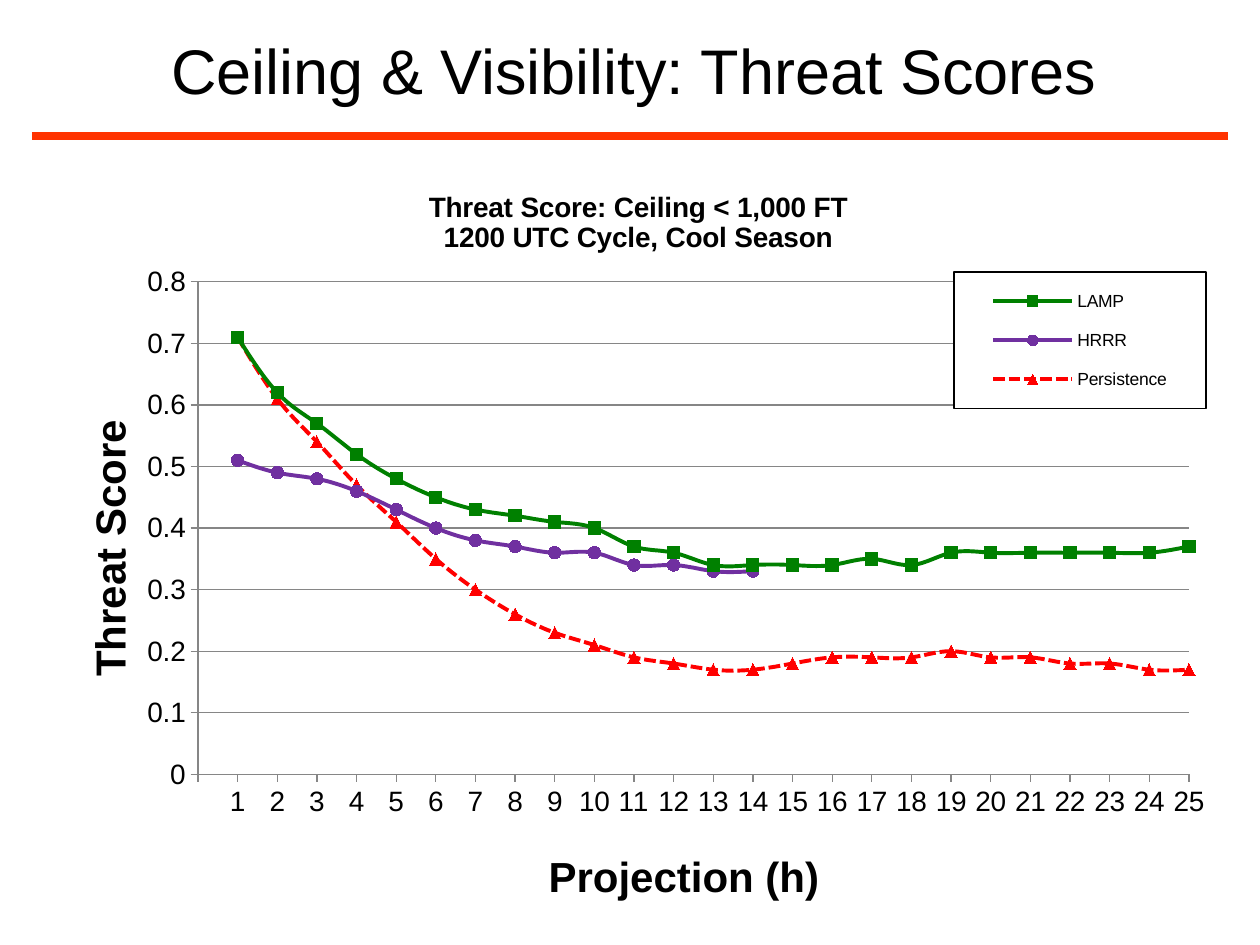
import pptx
import pptx.chart.data
import pptx.dml.color
import pptx.enum.chart
import pptx.enum.dml
import pptx.enum.shapes
import pptx.enum.text
import pptx.oxml
import pptx.util
from lxml import etree

# Content
HEADING = "Ceiling & Visibility: Threat Scores"
CHART_TITLE = ("Threat Score: Ceiling < 1,000 FT", "1200 UTC Cycle, Cool Season")
HOUR_TITLE = "Projection (h)"
SCORE_TITLE = "Threat Score"
SCORES = {
    "LAMP": [0.71, 0.62, 0.57, 0.52, 0.48, 0.45, 0.43, 0.42, 0.41, 0.4, 0.37, 0.36, 0.34,
             0.34, 0.34, 0.34, 0.35, 0.34, 0.36, 0.36, 0.36, 0.36, 0.36, 0.36, 0.37],
    "HRRR": [0.51, 0.49, 0.48, 0.46, 0.43, 0.4, 0.38, 0.37, 0.36, 0.36, 0.34, 0.34, 0.33,
             0.33],
    "Persistence": [0.71, 0.61, 0.54, 0.47, 0.41, 0.35, 0.3, 0.26, 0.23, 0.21, 0.19, 0.18,
                    0.17, 0.17, 0.18, 0.19, 0.19, 0.19, 0.2, 0.19, 0.19, 0.18, 0.18, 0.17,
                    0.17],
}

# Theme
MARK = pptx.enum.chart.XL_MARKER_STYLE
DASH = pptx.enum.dml.MSO_LINE
THEME = {
    "font": "Arial", "text": "000000", "rule": "FF3300", "grid": "868686", "paper": "FFFFFF",
    "heading": 36, "axis_title": 24, "chart_title": 16, "ticks": 16, "legend": 10,
    "rule_width": 4.5, "curve_width": 2.25, "thin": 0.75, "marker": 7,
}
CURVES = {
    "LAMP": ("008000", MARK.SQUARE, DASH.SOLID),
    "HRRR": ("7030A0", MARK.CIRCLE, DASH.SOLID),
    "Persistence": ("FF0000", MARK.TRIANGLE, DASH.SQUARE_DOT),
}

# Places in px: left, top, width, height (title spots: left, top)
PX = 914400 // 126
SLIDE = (1260, 945)
HEADING_BOX = (67, -10, 1134, 158)
RULE = (32, 136, 1228, 136)
CHART = (42, 158, 1187, 756)
PLOT = (198, 282, 991, 493)
LEGEND = (954, 272, 252, 137)
CHART_TITLE_SPOT = (425, 186)
HOUR_TITLE_SPOT = (541, 842)
SCORE_TITLE_SPOT = (75, 413)


def emu(lengths):
    return [pptx.util.Emu(length * PX) for length in lengths]


def rgb(name):
    return pptx.dml.color.RGBColor.from_string(THEME.get(name, name))


def set_all(target, values):
    for name, value in values.items():
        setattr(target, name, value)


def style_font(font, size, bold=False):
    set_all(font, {"name": THEME["font"], "size": pptx.util.Pt(THEME[size]), "bold": bold})
    font.color.rgb = rgb("text")


def style_line(line, color, width):
    line.color.rgb = rgb(color)
    line.width = pptx.util.Pt(THEME[width])


def place(part, spot, index=1, inner=False):
    """Give a chart part a manual layout, as fractions of the chart."""
    for old in part.xpath("c:layout"):
        part.remove(old)
    layout = pptx.oxml.parse_xml(
        '<c:layout xmlns:c="http://schemas.openxmlformats.org/drawingml/2006/chart">'
        "<c:manualLayout/></c:layout>")
    settings = [("layoutTarget", "inner")] if inner else []
    settings += [("xMode", "edge"), ("yMode", "edge")]
    fractions = [(spot[0] - CHART[0]) / CHART[2], (spot[1] - CHART[1]) / CHART[3]]
    fractions += [length / whole for length, whole in zip(spot[2:], CHART[2:])]
    settings += [(key, f"{value:.4f}") for key, value in zip("xywh", fractions)]
    for key, value in settings:
        tag = pptx.oxml.ns.qn("c:" + key)
        etree.SubElement(layout[0], tag).set("val", value)
    part.insert(index, layout)


def write_title(title, lines, size, spot):
    frame = title.text_frame
    for number, words in enumerate(lines):
        paragraph = frame.add_paragraph() if number else frame.paragraphs[0]
        run = paragraph.add_run()
        run.text = words
        style_font(paragraph.font, size, True)
        style_font(run.font, size, True)
    place(title._element, spot)


def add_heading(slide):
    heading = slide.shapes.add_textbox(*emu(HEADING_BOX)).text_frame
    set_all(heading, {"word_wrap": True, "text": HEADING,
                      "vertical_anchor": pptx.enum.text.MSO_ANCHOR.MIDDLE})
    heading.paragraphs[0].alignment = pptx.enum.text.PP_ALIGN.CENTER
    style_font(heading.paragraphs[0].runs[0].font, "heading")
    rule = slide.shapes.add_connector(pptx.enum.shapes.MSO_CONNECTOR.STRAIGHT, *emu(RULE))
    style_line(rule.line, "rule", "rule_width")
    etree.SubElement(rule._element.spPr, pptx.oxml.ns.qn("a:effectLst"))


def add_score_chart(slide):
    data = pptx.chart.data.XyChartData()
    for name, scores in SCORES.items():
        curve = data.add_series(name)
        for hour, score in enumerate(scores, 1):
            curve.add_data_point(hour, score)
    chart = slide.shapes.add_chart(
        pptx.enum.chart.XL_CHART_TYPE.XY_SCATTER_SMOOTH, *emu(CHART), data).chart
    style_font(chart.font, "legend")
    chart.plots[0].vary_by_categories = False
    place(chart._chartSpace.xpath(".//c:plotArea")[0], PLOT, 0, True)

    # Curves
    for curve in chart.plots[0].series:
        color, symbol, dash = CURVES[curve.name]
        style_line(curve.format.line, color, "curve_width")
        curve.format.line.dash_style = dash
        set_all(curve.marker, {"style": symbol, "size": THEME["marker"]})
        curve.marker.format.fill.solid()
        curve.marker.format.fill.fore_color.rgb = rgb(color)
        style_line(curve.marker.format.line, color, "thin")
    for smooth in chart._chartSpace.xpath(".//c:ser/c:smooth"):
        smooth.set("val", "1")

    # Axes
    axes = (
        (chart.category_axis, 25, 1, False, r"#,##0;\-#,##0;;", HOUR_TITLE, HOUR_TITLE_SPOT),
        (chart.value_axis, 0.8, 0.1, True, "General", SCORE_TITLE, SCORE_TITLE_SPOT),
    )
    for axis, top, step, grid, number_format, words, spot in axes:
        set_all(axis, {
            "minimum_scale": 0, "maximum_scale": top, "major_unit": step,
            "has_major_gridlines": grid, "has_title": True,
            "major_tick_mark": pptx.enum.chart.XL_TICK_MARK.OUTSIDE,
            "minor_tick_mark": pptx.enum.chart.XL_TICK_MARK.NONE,
        })
        set_all(axis.tick_labels, {"number_format": number_format,
                                   "number_format_is_linked": False})
        style_font(axis.tick_labels.font, "ticks")
        style_line(axis.format.line, "grid", "thin")
        if grid:
            style_line(axis.major_gridlines.format.line, "grid", "thin")
        write_title(axis.axis_title, [words], "axis_title", spot)
    score_body = chart.value_axis.axis_title.text_frame._txBody.bodyPr
    score_body.set("rot", "-5400000")
    score_body.set("vert", "horz")

    # Chart title and legend
    chart.has_title = True
    write_title(chart.chart_title, CHART_TITLE, "chart_title", CHART_TITLE_SPOT)
    chart.has_legend = True
    legend = chart.legend
    set_all(legend, {"position": pptx.enum.chart.XL_LEGEND_POSITION.RIGHT,
                     "include_in_layout": True})
    style_font(legend.font, "legend")
    place(legend._element, LEGEND)
    frame = pptx.oxml.parse_xml(
        '<c:spPr xmlns:c="http://schemas.openxmlformats.org/drawingml/2006/chart"'
        ' xmlns:a="http://schemas.openxmlformats.org/drawingml/2006/main">'
        f'<a:solidFill><a:srgbClr val="{THEME["paper"]}"/></a:solidFill>'
        f'<a:ln w="{pptx.util.Pt(THEME["thin"])}"><a:solidFill>'
        f'<a:srgbClr val="{THEME["text"]}"/></a:solidFill></a:ln></c:spPr>')
    legend._element.xpath("c:txPr")[0].addprevious(frame)


def main():
    deck = pptx.Presentation()
    deck.slide_width, deck.slide_height = emu(SLIDE)
    slide = deck.slides.add_slide(deck.slide_layouts[6])
    add_heading(slide)
    add_score_chart(slide)
    deck.save("out.pptx")


if __name__ == "__main__":
    main()
